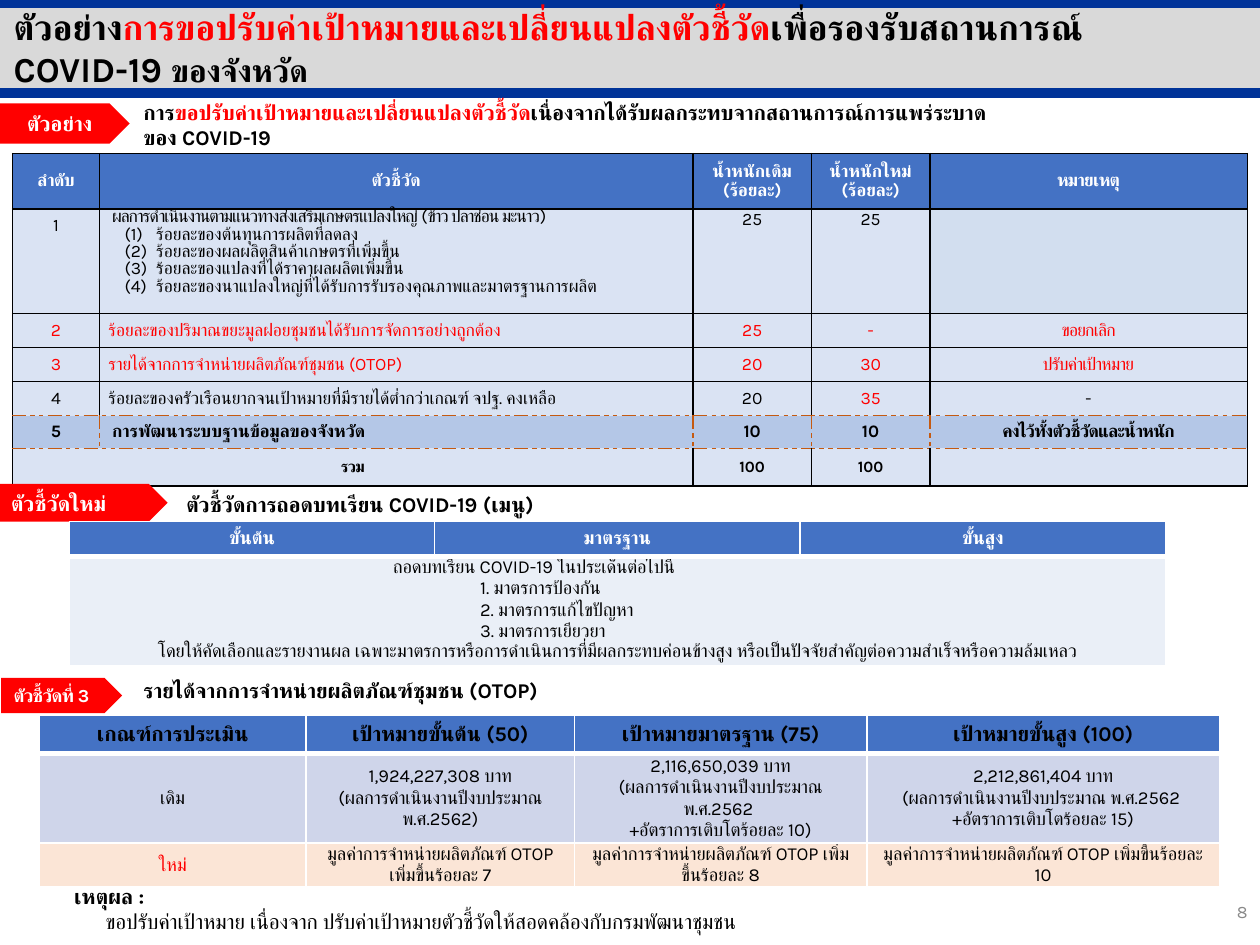
from lxml import etree
from pptx import Presentation
from pptx.dml.color import RGBColor
from pptx.enum.shapes import MSO_CONNECTOR, MSO_SHAPE
from pptx.enum.text import MSO_ANCHOR, PP_ALIGN
from pptx.oxml.ns import qn
from pptx.util import Inches, Pt

LEFT, CENTER, RIGHT = PP_ALIGN.LEFT, PP_ALIGN.CENTER, PP_ALIGN.RIGHT
TOP, MIDDLE = MSO_ANCHOR.TOP, MSO_ANCHOR.MIDDLE
STRAIGHT, RECTANGLE, PENTAGON = MSO_CONNECTOR.STRAIGHT, MSO_SHAPE.RECTANGLE, MSO_SHAPE.PENTAGON
FONT = "Karla"
COLOURS = {
    "black": "000000", "white": "FFFFFF", "red": "FF0000", "navy": "003399", "band": "D9D9D9",
    "number": "898989", "header": "4472C4", "pale": "DAE3F3", "empty": "D2DEEF", "kept": "B4C7E7",
    "dash": "C55A11", "menu": "EAEFF7", "former": "CFD5EA", "revised": "FBE5D6",
}


def colour(name):
    """Return the named colour."""
    return RGBColor.from_string(COLOURS[name])


def write(para, spans, size=10, tone="black", bold=False, align=LEFT, indent=0,
          hanging=0, spacing=None, tracking=0, numbered=False):
    """Fill a paragraph with a string or with (text, colour, size) spans."""
    props = para._p.get_or_add_pPr()
    props.set("marL", str(Inches(indent)))
    props.set("indent", str(Inches(-hanging)))
    if numbered:
        etree.SubElement(props, qn("a:buAutoNum"), type="arabicParenBoth")
    para.alignment = align
    if spacing:
        para.line_spacing = spacing
    font = para.font
    font.name, font.size, font.bold = FONT, Pt(size), bold
    font.color.rgb = colour(tone)
    default = props.find(qn("a:defRPr"))
    default.set("spc", str(round(tracking * 100)))
    etree.SubElement(default, qn("a:cs"), typeface=FONT)
    for text, own_tone, own_size in [(spans, tone, size)] if isinstance(spans, str) else spans:
        for index, line in enumerate(text.split("\n")):
            if index:
                para.add_line_break()
            span = para.add_run()
            span.text = line
            if own_tone != tone:
                span.font.color.rgb = colour(own_tone)
            if own_size != size:
                span.font.size = Pt(own_size)


def add_text(page, box, spans, anchor=TOP, **style):
    """Add a wrapping text box with one paragraph and return its frame."""
    frame = page.shapes.add_textbox(*map(Inches, box)).text_frame
    frame.word_wrap, frame.vertical_anchor = True, anchor
    write(frame.paragraphs[0], spans, **style)
    return frame


def add_block(page, kind, box, fill):
    """Add a flat filled shape without outline."""
    block = page.shapes.add_shape(kind, *map(Inches, box))
    block.shadow.inherit = False
    block.fill.solid()
    block.fill.fore_color.rgb = colour(fill)
    block.line.fill.background()
    return block


def add_tag(page, box, text, **style):
    """Add a red arrow label."""
    frame = add_block(page, PENTAGON, box, "red").text_frame
    frame.word_wrap, frame.vertical_anchor = False, MIDDLE
    write(frame.paragraphs[0], text, tone="white", bold=True, **style)


def set_borders(cell, tones=("white",) * 4, bottom=1):
    """Draw the left, right, top and bottom borders of a cell."""
    props = cell._tc.get_or_add_tcPr()
    for index, (side, tone, width) in enumerate(zip("LRTB", tones, (1, 1, 1, bottom))):
        line = etree.Element(qn(f"a:ln{side}"), w=str(Pt(width)))
        etree.SubElement(etree.SubElement(line, qn("a:solidFill")), qn("a:srgbClr"), val=COLOURS[tone])
        etree.SubElement(line, qn("a:prstDash"), val="sysDashDotDot" if tone == "dash" else "solid")
        props.insert(index, line)


def add_grid(page, left, top, widths, heights):
    """Add a table with the given column widths and row heights."""
    box = map(Inches, (left, top, sum(widths), sum(heights)))
    grid = page.shapes.add_table(len(heights), len(widths), *box).table
    for column, width in zip(grid.columns, widths):
        column.width = Inches(width)
    for row, height in zip(grid.rows, heights):
        row.height = Inches(height)
    return grid


def fill_cell(cell, fill, text, anchor=MIDDLE, margin=0, **style):
    """Colour a cell and write one paragraph in it."""
    cell.fill.solid()
    cell.fill.fore_color.rgb = colour(fill)
    cell.vertical_anchor = anchor
    cell.margin_left = cell.margin_right = Inches(0.07)
    cell.margin_top = cell.margin_bottom = Inches(margin)
    write(cell.text_frame.paragraphs[0], text, **style)


def add_title(page, left, top, width):
    """Place the heading band between two navy rules."""
    add_block(page, RECTANGLE, (left, top + 0.05, width, 0.68), "band")
    for offset in (0.02, 0.74):
        ends = map(Inches, (left, top + offset, left + width, top + offset))
        rule = page.shapes.add_connector(STRAIGHT, *ends)
        rule.line.color.rgb, rule.line.width = colour("navy"), Pt(6)
        etree.SubElement(rule._element.spPr, qn("a:effectLst"))
    add_text(page, (left + 0.01, top - 0.01, 9.41, 0.77), [
        ("ตัวอย่าง", "black", 20), ("การขอปรับค่าเป้าหมายและเปลี่ยนแปลงตัวชี้วัด", "red", 20),
        ("เพื่อรองรับสถานการณ์ COVID-19 ", "black", 20),
        ("ของจังหวัด", "black", 18)], anchor=MIDDLE, size=20, bold=True)


def add_indicators(page, left, top):
    """Place the table of indicators and weights."""
    rows = [
        ("ลำดับ", "ตัวชี้วัด", "น้ำหนักเดิม\n(ร้อยละ)", "น้ำหนักใหม่\n(ร้อยละ)", "หมายเหตุ"),
        ("1", "ผลการดำเนินงานตามแนวทางส่งเสริมเกษตรแปลงใหญ่ (ข้าว ปลาช่อน มะนาว)", "25", "25", ""),
        ("2", "ร้อยละของปริมาณขยะมูลฝอยชุมชนได้รับการจัดการอย่างถูกต้อง", "25", "-", "ขอยกเลิก"),
        ("3", "รายได้จากการจำหน่ายผลิตภัณฑ์ชุมชน (OTOP)", "20", "30", "ปรับค่าเป้าหมาย"),
        ("4", "ร้อยละของครัวเรือนยากจนเป้าหมายที่มีรายได้ต่ำกว่าเกณฑ์ จปฐ. คงเหลือ", "20", "35", "-"),
        ("5", "การพัฒนาระบบฐานข้อมูลของจังหวัด", "10", "10", "คงไว้ทั้งตัวชี้วัดและน้ำหนัก"),
        ("รวม", "", "100", "100", ""),
    ]
    details = ["ร้อยละของต้นทุนการผลิตที่ลดลง", "ร้อยละของผลผลิตสินค้าเกษตรที่เพิ่มขึ้น",
               "ร้อยละของแปลงที่ได้ราคาผลผลิตเพิ่มขึ้น",
               "ร้อยละของนาแปลงใหญ่ที่ได้รับการรับรองคุณภาพและมาตรฐานการผลิต"]
    grid = add_grid(page, left, top, (0.69, 4.71, 0.94, 0.94, 2.52),
                    (0.44, 0.83, 0.27, 0.27, 0.27, 0.26, 0.26))
    for r, row in enumerate(rows):
        for c, text in enumerate(row):
            cell, first = grid.cell(r, c), (r, c) == (1, 1)
            fill = {0: "header", 5: "kept"}.get(r, "empty" if (r, c) == (1, 4) else "pale")
            red = r in (2, 3) or (r, c) == (4, 3)
            fill_cell(cell, fill, text, anchor=TOP if r == 1 else MIDDLE,
                      margin=0.05 if (r, c) == (1, 0) else 0,
                      tone="white" if r == 0 else "red" if red else "black",
                      bold=r in (0, 5, 6), size=9 if r == 6 else 10,
                      align=LEFT if c == 1 and r else CENTER,
                      indent=0.03 if c == 1 and r in (1, 5) else 0,
                      spacing=0.9 if r == 0 else 0.85 if first else None,
                      tracking=-0.5 if first else (-0.3, 0, 0, 0, -0.4)[c])
            dashed = (r == 5 and c > 0, r == 5 and c < 4, r in (5, 6), r in (4, 5))
            set_borders(cell, ["dash" if side else "black" for side in dashed])
    for detail in details:
        write(grid.cell(1, 1).text_frame.add_paragraph(), detail, indent=0.38, hanging=0.25,
              spacing=0.85, numbered=True)
    grid.cell(6, 0).merge(grid.cell(6, 1))


def add_menu(page, left, top):
    """Place the table of levels for the lessons learned."""
    grid = add_grid(page, left, top, (2.9,) * 3, (0.27, 0.87))
    for c, text in enumerate(("ขั้นต้น", "มาตรฐาน", "ขั้นสูง")):
        fill_cell(grid.cell(0, c), "header", text, TOP, 0.05, size=10.5, tone="white", bold=True, align=CENTER)
        set_borders(grid.cell(0, c), bottom=3)
    body = grid.cell(1, 0)
    body.merge(grid.cell(1, 2))
    fill_cell(body, "menu", "ถอดบทเรียน COVID-19 ในประเด็นต่อไปนี้", TOP, size=10.5, indent=2.5)
    for text in ("1. มาตรการป้องกัน", "2. มาตรการแก้ไขปัญหา", "3. มาตรการเยียวยา"):
        write(body.text_frame.add_paragraph(), text, size=10.5, indent=3.19)
    write(body.text_frame.add_paragraph(), "โดยให้คัดเลือกและรายงานผล เฉพาะมาตรการหรือการดำเนินการที่มีผลกระทบค่อนข้างสูง "
          "หรือเป็นปัจจัยสำคัญต่อความสำเร็จหรือความล้มเหลว", size=10.5, align=CENTER, spacing=0.9)
    set_borders(body)


def add_targets(page, left, top):
    """Place the table of former and revised targets."""
    result = "(ผลการดำเนินงานปีงบประมาณ พ.ศ.2562"
    growth = "มูลค่าการจำหน่ายผลิตภัณฑ์ OTOP เพิ่มขึ้นร้อยละ "
    rows = [("เกณฑ์การประเมิน", "เป้าหมายขั้นต้น (50)", "เป้าหมายมาตรฐาน (75)", "เป้าหมายขั้นสูง (100)"),
            ("เดิม", "1,924,227,308 บาท", "2,116,650,039 บาท", "2,212,861,404 บาท"),
            ("ใหม่", growth + "7", growth + "8", growth + "10")]
    grid = add_grid(page, left, top, (2.12, 2.13, 2.32, 2.8), (0.3, 0.71, 0.34))
    for r, (row, fill) in enumerate(zip(rows, ("header", "former", "revised"))):
        for c, text in enumerate(row):
            fill_cell(grid.cell(r, c), fill, text, margin=0 if r else 0.05, size=10.5 if r else 12,
                      bold=r == 0, align=CENTER, tone="red" if (r, c) == (2, 0) else "black")
            set_borders(grid.cell(r, c), bottom=1 if r else 3)
    for c, ending in enumerate((")", " \n+อัตราการเติบโตร้อยละ 10)", " \n+อัตราการเติบโตร้อยละ 15)"), 1):
        write(grid.cell(1, c).text_frame.add_paragraph(), result + ending, size=10.5, align=CENTER)


def main():
    """Build the slide and save it."""
    deck = Presentation()
    deck.slide_width, deck.slide_height = Inches(10), Inches(7.5)
    page = deck.slides.add_slide(deck.slide_layouts[6])
    add_title(page, 0, 0, 10)
    heading = {"size": 12, "bold": True}
    add_text(page, (1.04, 0.74, 8.95, 0.5), [
        ("การ", "black", 12), ("ขอปรับค่าเป้าหมายและเปลี่ยนแปลงตัวชี้วัด", "red", 12),
        ("เนื่องจากได้รับผลกระทบจากสถานการณ์การแพร่ระบาด\nของ COVID-19", "black", 12)], **heading)
    add_tag(page, (0, 0.82, 1.03, 0.32), "ตัวอย่าง", size=12, align=CENTER)
    add_indicators(page, 0.1, 1.22)
    add_tag(page, (-0.01, 3.84, 1.34, 0.3), "ตัวชี้วัดใหม่", size=12)
    add_text(page, (1.38, 3.85, 7.72, 0.3), "ตัวชี้วัดการถอดบทเรียน COVID-19 (เมนู)", **heading)
    add_menu(page, 0.55, 4.14)
    add_tag(page, (0.01, 5.38, 0.96, 0.28), "ตัวชี้วัดที่ 3", size=10.5, tracking=-0.4)
    add_text(page, (1.04, 5.33, 7.72, 0.3), "รายได้จากการจำหน่ายผลิตภัณฑ์ชุมชน (OTOP)", **heading)
    add_targets(page, 0.31, 5.68)
    reason = add_text(page, (0.24, 6.96, 9.08, 0.5), "เหตุผล :", indent=0.25, **heading)
    write(reason.add_paragraph(), "ขอปรับค่าเป้าหมาย เนื่องจาก ปรับค่าเป้าหมายตัวชี้วัดให้สอดคล้องกับกรมพัฒนาชุมชน",
          size=12, indent=0.5)
    add_text(page, (7.75, 7.1, 2.25, 0.4), "8", tone="number", align=RIGHT)
    deck.save("out.pptx")


if __name__ == "__main__":
    main()
